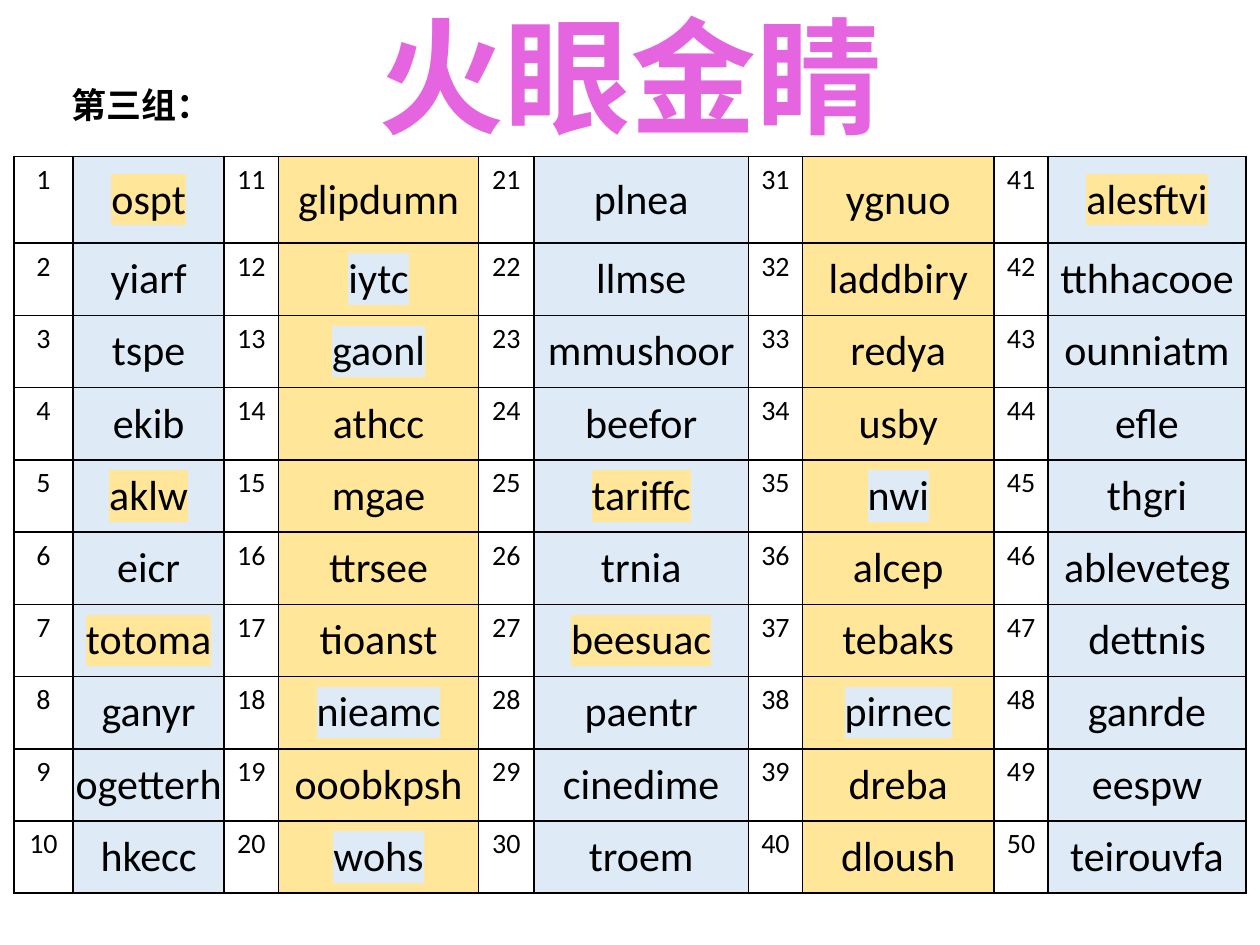
from lxml.etree import SubElement
from pptx import Presentation
from pptx.dml.color import RGBColor
from pptx.enum.text import MSO_ANCHOR, PP_ALIGN
from pptx.oxml.ns import qn
from pptx.util import Inches, Pt

BLACK = RGBColor(0x00, 0x00, 0x00)
PINK = RGBColor(0xE5, 0x64, 0xE0)
EDGE = RGBColor(0x83, 0xD9, 0xE3)
BLUE = RGBColor(0xDE, 0xEB, 0xF7)
GOLD = RGBColor(0xFF, 0xE6, 0x99)

WIDE, HIGH = 10, 7.5
LEFT, TOP, TALL = 0.11, 1.24, 5.85
HEAD = 0.69
COLS = [0.47, 1.2, 0.43, 1.59, 0.44, 1.7, 0.43, 1.52, 0.43, 1.57]
WORDS = [
    "ospt yiarf tspe ekib aklw eicr totoma ganyr ogetterh hkecc".split(),
    "glipdumn iytc gaonl athcc mgae ttrsee tioanst nieamc ooobkpsh wohs".split(),
    "plnea llmse mmushoor beefor tariffc trnia beesuac paentr cinedime troem".split(),
    "ygnuo laddbiry redya usby nwi alcep tebaks pirnec dreba dloush".split(),
    "alesftvi tthhacooe ounniatm efle thgri ableveteg dettnis ganrde eespw teirouvfa".split(),
]
MARKED = set("ospt aklw totoma iytc gaonl nieamc wohs tariffc beesuac nwi pirnec alesftvi".split())


def solid(node, color):
    fill = SubElement(node, qn("a:solidFill"))
    SubElement(fill, qn("a:srgbClr")).set("val", str(color))


def write(frame, text, size, color=BLACK, bold=False, align=PP_ALIGN.CENTER, mark=None, edge=None):
    para = frame.paragraphs[0]
    para.alignment = align
    run = para.add_run()
    run.text = text
    font = run.font
    font.size = Pt(size)
    font.bold = bold
    if edge:
        line = SubElement(font._element, qn("a:ln"), w=str(Pt(0.75)))
        solid(line, edge)
    font.color.rgb = color
    if mark:
        light = SubElement(font._element, qn("a:highlight"))
        SubElement(light, qn("a:srgbClr")).set("val", str(mark))
    font.name = "Calibri"


def border(cell):
    props = cell._tc.get_or_add_tcPr()
    for side in ("a:lnL", "a:lnR", "a:lnT", "a:lnB"):
        solid(SubElement(props, qn(side), w=str(Pt(1))), BLACK)


def number(cell, value):
    border(cell)
    cell.fill.background()
    write(cell.text_frame, str(value), 16)


def puzzle(cell, word, base, other):
    border(cell)
    cell.fill.solid()
    cell.fill.fore_color.rgb = base
    cell.margin_left = cell.margin_right = cell.margin_top = cell.margin_bottom = 0
    cell.vertical_anchor = MSO_ANCHOR.MIDDLE
    write(cell.text_frame, word, 24, mark=other if word in MARKED else None)


def grid(slide):
    count = len(WORDS[0])
    frame = slide.shapes.add_table(count, len(COLS), Inches(LEFT), Inches(TOP),
                                   Inches(sum(COLS)), Inches(TALL))
    table = frame.table
    table.first_row = table.horz_banding = False
    for col, width in zip(table.columns, COLS):
        col.width = Inches(width)
    for row in table.rows:
        row.height = Inches((TALL - HEAD) / (count - 1))
    table.rows[0].height = Inches(HEAD)
    for group, words in enumerate(WORDS):
        base, other = (GOLD, BLUE) if group % 2 else (BLUE, GOLD)
        for row, word in enumerate(words):
            number(table.cell(row, 2 * group), group * count + row + 1)
            puzzle(table.cell(row, 2 * group + 1), word, base, other)


def label(slide):
    box = slide.shapes.add_textbox(Inches(0.47), Inches(0.61), Inches(2.84), Inches(0.43))
    box.text_frame.word_wrap = True
    write(box.text_frame, "第三组：", 20, bold=True, align=PP_ALIGN.LEFT)


def title(slide):
    box = slide.shapes.title
    box.left, box.top = Inches(2.89), Inches(-0.06)
    box.width, box.height = Inches(4.22), Inches(1.3)
    box.text_frame.word_wrap = False
    box.text_frame.vertical_anchor = MSO_ANCHOR.TOP
    write(box.text_frame, "火眼金睛", 72, color=PINK, bold=True, edge=EDGE)


def main():
    deck = Presentation()
    deck.slide_width, deck.slide_height = Inches(WIDE), Inches(HIGH)
    slide = deck.slides.add_slide(deck.slide_layouts[5])
    grid(slide)
    label(slide)
    title(slide)
    deck.save("out.pptx")


if __name__ == "__main__":
    main()
